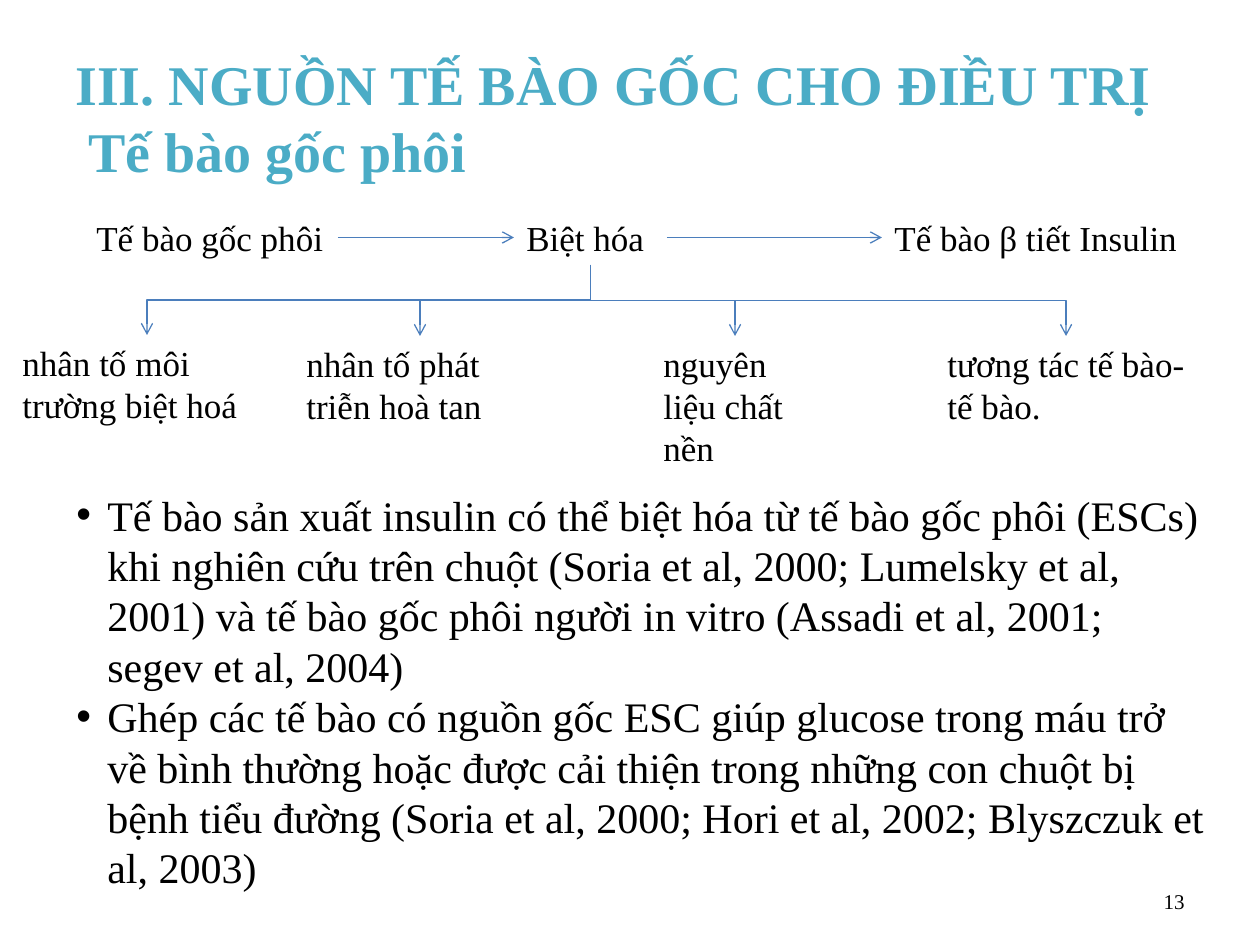
from lxml import etree
from pptx import Presentation, util as u
from pptx.dml.color import RGBColor
from pptx.enum import shapes, text
from pptx.oxml.ns import qn

PX = u.Inches(1) // 126
FONT = "Times New Roman"
COLORS = {"title": "4BACC6", "text": "000000", "line": "4B7EBC"}

TITLE = "III. NGUỒN TẾ BÀO GỐC CHO ĐIỀU TRỊ\v Tế bào gốc phôi"
# Process steps: text, left, width
STEPS = [
    ("Tế bào gốc phôi", 84, 254),
    ("Biệt hóa", 514, 153),
    ("Tế bào β tiết Insulin", 882, 310),
]
STEP_TOP, STEP_HEIGHT = 210, 55
# Differentiation factors: text, left, top, width, height
FACTORS = [
    ("nhân tố môi trường biệt hoá", 10, 335, 274, 97),
    ("nhân tố phát triễn hoà tan", 294, 336, 252, 97),
    ("nguyên liệu chất nền", 651, 336, 168, 140),
    ("tương tác tế bào-tế bào.", 935, 336, 262, 140),
]
FINDINGS = [
    "Tế bào sản xuất insulin có thể biệt hóa từ tế bào gốc phôi (ESCs) khi nghiên cứu trên chuột "
    "(Soria et al, 2000; Lumelsky et al, 2001) và tế bào gốc phôi người in vitro "
    "(Assadi et al, 2001; segev et al, 2004)",
    "Ghép các tế bào có nguồn gốc ESC giúp glucose trong máu trở về bình thường hoặc được cải thiện "
    "trong những con chuột bị bệnh tiểu đường "
    "(Soria et al, 2000; Hori et al, 2002; Blyszczuk et al, 2003)",
]
PAGE_NUMBER = "13"

presentation = Presentation()
presentation.slide_width, presentation.slide_height = 1260 * PX, 945 * PX
slide = presentation.slides.add_slide(presentation.slide_layouts[6])


def add_text(paragraphs, box, size=20, color="text", bold=False, wrap=True, grow=False,
             align=text.PP_ALIGN.LEFT, anchor=text.MSO_ANCHOR.TOP, bullet=False):
    frame = slide.shapes.add_textbox(*(round(value * PX) for value in box)).text_frame
    frame.word_wrap = wrap
    frame.vertical_anchor = anchor
    frame.auto_size = text.MSO_AUTO_SIZE.SHAPE_TO_FIT_TEXT if grow else text.MSO_AUTO_SIZE.NONE
    for index, content in enumerate(paragraphs):
        paragraph = frame.add_paragraph() if index else frame.paragraphs[0]
        paragraph.text = content
        paragraph.alignment = align
        for run in paragraph.runs:
            run.font.name, run.font.size, run.font.bold = FONT, u.Pt(size), bold
            run.font.color.rgb = RGBColor.from_string(COLORS[color])
        if bullet:
            properties = paragraph._p.get_or_add_pPr()
            properties.set("marL", str(63 * PX))
            properties.set("indent", str(-31 * PX))
            etree.SubElement(properties, qn("a:buFont"), typeface="Arial")
            etree.SubElement(properties, qn("a:buChar"), char="•")


def add_arrow(kind, *ends):
    arrow = slide.shapes.add_connector(kind, *(round(value * PX) for value in ends))
    arrow.line.color.rgb = RGBColor.from_string(COLORS["line"])
    arrow.line.width = u.Pt(0.75)
    etree.SubElement(arrow.line._get_or_add_ln(), qn("a:tailEnd"), type="arrow")
    etree.SubElement(arrow._element.spPr, qn("a:effectLst"))
    return arrow


def add_branch(x1, y1, x2, y2):
    """Elbow arrow leaving downward: an elbow box turned by a quarter about its centre."""
    center_x, center_y = (x1 + x2) / 2, (y1 + y2) / 2
    half_width, half_height = (y2 - y1) / 2, abs(x2 - x1) / 2
    side = 1 if x2 < x1 else -1  # a branch to the right is mirrored
    arrow = add_arrow(shapes.MSO_CONNECTOR.ELBOW,
                      center_x - side * half_width, center_y - half_height,
                      center_x + side * half_width, center_y + half_height)
    arrow._element.spPr.xfrm.set("rot", str((90 if side == 1 else 270) * 60000))


# Title
add_text([TITLE], (63, 38, 1134, 157), size=32, color="title", bold=True,
         anchor=text.MSO_ANCHOR.MIDDLE)

# Process row with arrows between neighbours
for label, left, width in STEPS:
    add_text([label], (left, STEP_TOP, width, STEP_HEIGHT), wrap=False, grow=True)
middle = STEP_TOP + STEP_HEIGHT / 2
for (_, left, width), (_, next_left, _) in zip(STEPS, STEPS[1:]):
    add_arrow(shapes.MSO_CONNECTOR.STRAIGHT, left + width, middle, next_left, middle)

# Factors branching from the middle step
_, hub_left, hub_width = STEPS[1]
for label, left, top, width, height in FACTORS:
    add_text([label], (left, top, width, height), grow=True)
    add_branch(hub_left + hub_width / 2, STEP_TOP + STEP_HEIGHT, left + width / 2, top)

# Findings and page number
add_text([PAGE_NUMBER], (903, 876, 294, 50), size=12, align=text.PP_ALIGN.RIGHT,
         anchor=text.MSO_ANCHOR.MIDDLE)
add_text(FINDINGS, (32, 483, 1187, 572), size=24, grow=True, bullet=True)

presentation.save("out.pptx")
